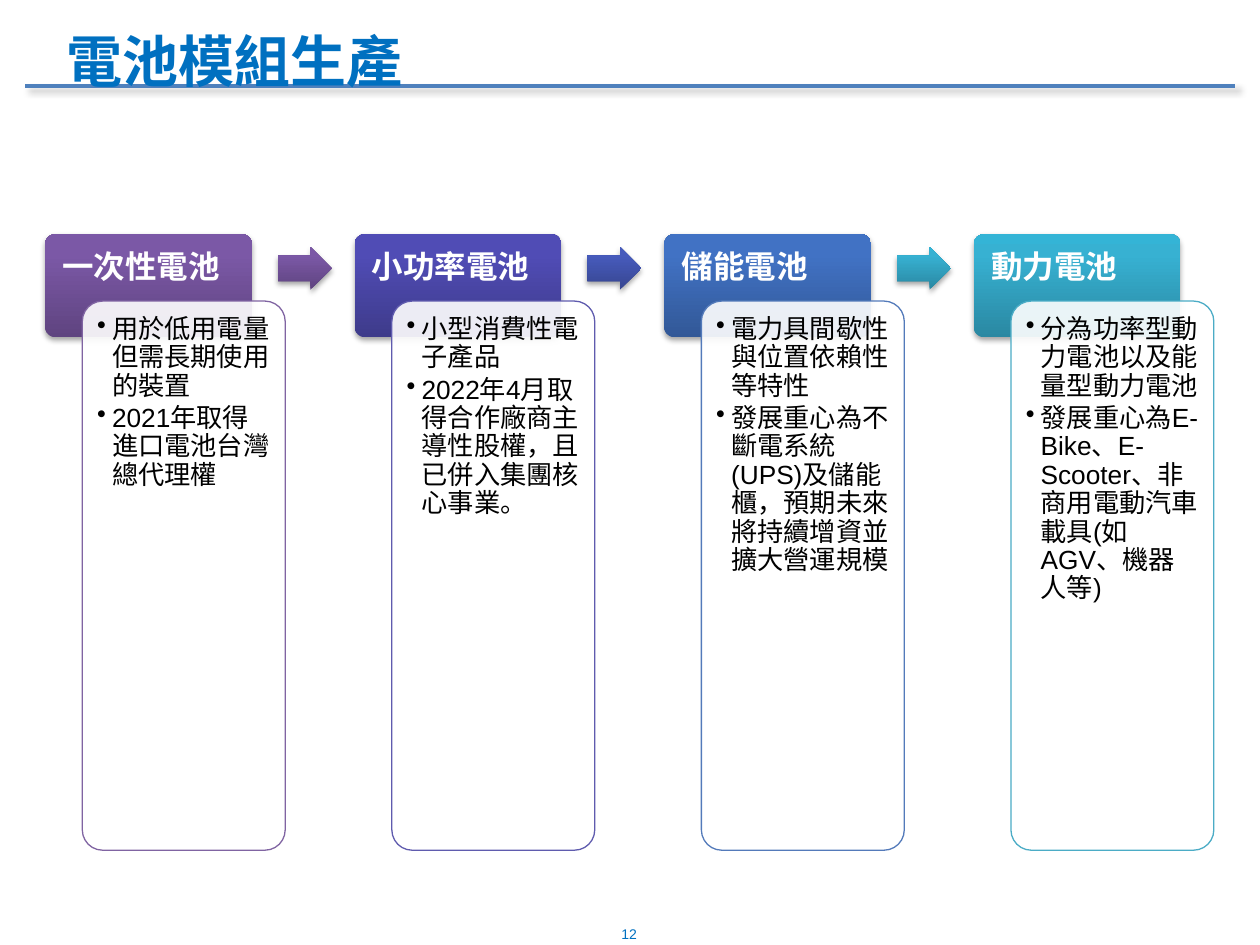
import dataclasses

import lxml.etree
import pptx
import pptx.dml.color
import pptx.enum.shapes
import pptx.enum.text
import pptx.oxml
import pptx.oxml.ns
import pptx.util

Cm = pptx.util.Cm
Pt = pptx.util.Pt
qn = pptx.oxml.ns.qn
SHAPES = pptx.enum.shapes.MSO_SHAPE
ALIGN = pptx.enum.text.PP_ALIGN


@dataclasses.dataclass(frozen=True)
class Theme:
    font: str = "Arial"
    accent: str = "0070C0"
    rule: str = "4F81BD"
    white: str = "FFFFFF"
    black: str = "000000"
    title_size: float = 32
    header_size: float = 18
    body_size: float = 15
    number_size: float = 8
    purple: tuple = ("5F4480", "7B58A6", "7C57A8")
    indigo: tuple = ("3E3B8B", "504CB5", "4F4BB8")
    royal: tuple = ("374691", "475BBC", "455ABF")
    blue: tuple = ("325897", "4172C4", "3F72C7")
    teal: tuple = ("2A88A2", "37B1D2", "34B4D6")


THEME = Theme()

# Heading, header gradient, outline, gradient of the arrow that follows, bullets
STAGES = [
    ("一次性電池", THEME.purple, "8064A2", THEME.purple,
     ["用於低用電量但需長期使用的裝置", "2021年取得進口電池台灣總代理權"]),
    ("小功率電池", THEME.indigo, "5F5BAE", THEME.royal,
     ["小型消費性電子產品",
      "2022年4月取得合作廠商主導性股權，且已併入集團核心事業。"]),
    ("儲能電池", THEME.blue, "537ABA", THEME.teal,
     ["電力具間歇性與位置依賴性等特性",
      "發展重心為不斷電系統(UPS)及儲能櫃，預期未來將持續增資並擴大營運規模"]),
    ("動力電池", THEME.teal, "4BACC6", None,
     ["分為功率型動力電池以及能量型動力電池",
      "發展重心為E-Bike、E-Scooter、非商用電動汽車載具(如AGV、機器人等)"]),
]
STAGE_LEFT, STAGE_TOP, STAGE_PITCH = 0.91, 4.72, 6.24


def rgb(value):
    return pptx.dml.color.RGBColor.from_string(value)


def add_child(parent, tag, **attributes):
    child = lxml.etree.SubElement(parent, qn(tag))
    for name, value in attributes.items():
        child.set(name, str(value))
    return child


def add_shadow(properties, blur, distance, angle, opacity):
    """Give shape properties an outer shadow; call after fill and line are set."""
    effects = properties.find(qn("a:effectLst"))
    if effects is None:
        effects = add_child(properties, "a:effectLst")
    shadow = add_child(effects, "a:outerShdw", blurRad=Pt(blur), dist=Pt(distance),
                       dir=angle * 60000, algn="ctr", rotWithShape=0)
    color = add_child(shadow, "a:srgbClr", val=THEME.black)
    add_child(color, "a:alpha", val=opacity * 1000)


def fill_gradient(shape, colors):
    """Fill from bottom to top with three colours."""
    shape.fill.solid()
    solid = shape._element.spPr.find(qn("a:solidFill"))
    gradient = pptx.oxml.parse_xml(
        f'<a:gradFill {pptx.oxml.ns.nsdecls("a")} rotWithShape="1"/>')
    stops = add_child(gradient, "a:gsLst")
    for position, color in zip((0, 80, 100), colors):
        stop = add_child(stops, "a:gs", pos=position * 1000)
        add_child(stop, "a:srgbClr", val=color)
    add_child(gradient, "a:lin", ang=270 * 60000, scaled=0)
    solid.getparent().replace(solid, gradient)


def write_text(shape, text, *, size, color, bold=False, align=ALIGN.LEFT,
               bullet=False, line_spacing=None, space_after=0, margin=None):
    """Write one paragraph for each line of text."""
    frame = shape.text_frame
    frame.word_wrap = True
    frame.vertical_anchor = pptx.enum.text.MSO_ANCHOR.TOP
    if margin is not None:
        frame.margin_left, frame.margin_right = Cm(margin[0]), Cm(margin[0])
        frame.margin_top, frame.margin_bottom = Cm(margin[1]), Cm(margin[1])
    frame.text = text
    for paragraph in frame.paragraphs:
        paragraph.alignment = align
        paragraph.line_spacing = line_spacing
        paragraph.space_after = Pt(space_after)
        if bullet:
            properties = paragraph._p.get_or_add_pPr()
            properties.set("marL", str(Cm(0.3)))
            properties.set("indent", str(-Cm(0.3)))
            add_child(properties, "a:buChar", char="•")
        font = paragraph.font
        font.name, font.size, font.bold = THEME.font, Pt(size), bold
        font.color.rgb = rgb(color)


def add_label(slide, text, left, top, width, height, **text_format):
    box = slide.shapes.add_textbox(Cm(left), Cm(top), Cm(width), Cm(height))
    write_text(box, text, **text_format)


def add_title_rule(slide):
    rule = slide.shapes.add_connector(pptx.enum.shapes.MSO_CONNECTOR.STRAIGHT,
                                      Cm(24.89), Cm(1.73), Cm(0.51), Cm(1.73))
    rule.line.color.rgb = rgb(THEME.rule)
    rule.line.width = Pt(2)
    add_shadow(rule._element.spPr, 4, 3, 45, 40)


def add_preset(slide, preset, left, top, width, height, adjustments):
    shape = slide.shapes.add_shape(preset, Cm(left), Cm(top), Cm(width), Cm(height))
    for index, value in enumerate(adjustments):
        shape.adjustments[index] = value
    shape.shadow.inherit = False
    return shape


def add_gradient_shape(slide, preset, *position, adjustments, colors):
    shape = add_preset(slide, preset, *position, adjustments)
    fill_gradient(shape, colors)
    shape.line.fill.background()
    add_shadow(shape._element.spPr, 3.1, 1.8, 90, 35)
    return shape


def add_body_card(slide, left, top, outline, bullets):
    card = add_preset(slide, SHAPES.ROUNDED_RECTANGLE, left, top, 4.09, 11.07, [0.1])
    card.fill.solid()
    card.fill.fore_color.rgb = rgb(THEME.white)
    color = card._element.spPr.find(qn("a:solidFill"))[0]
    add_child(color, "a:alpha", val=90000)
    card.line.color.rgb = rgb(outline)
    card.line.width = Pt(0.75)
    write_text(card, "\n".join(bullets), size=THEME.body_size, color=THEME.black,
               bullet=True, line_spacing=0.9, space_after=2.25, margin=(0.18, 0.18))


def add_stage(slide, left, heading, header_colors, outline, arrow_colors, bullets):
    header = add_gradient_shape(slide, SHAPES.ROUNDED_RECTANGLE, left, STAGE_TOP,
                                4.17, 2.08, adjustments=[0.1], colors=header_colors)
    write_text(header, heading, size=THEME.header_size, color=THEME.white, bold=True,
               line_spacing=0.9, margin=(0.29, 0.29))
    add_body_card(slide, left + 0.75, STAGE_TOP + 1.35, outline, bullets)
    if arrow_colors:
        add_gradient_shape(slide, SHAPES.RIGHT_ARROW, left + 4.69, STAGE_TOP + 0.26,
                           1.09, 0.86, adjustments=[0.6, 0.5], colors=arrow_colors)


def main():
    presentation = pptx.Presentation()
    presentation.slide_width, presentation.slide_height = Cm(25.4), Cm(19.05)
    slide = presentation.slides.add_slide(presentation.slide_layouts[6])
    add_title_rule(slide)
    add_label(slide, "電池模組生產", 1.09, 0.41, 16.84, 1.24,
              size=THEME.title_size, color=THEME.accent, bold=True)
    add_label(slide, "12", 12.14, 18.54, 1.09, 0.51,
              size=THEME.number_size, color=THEME.accent, align=ALIGN.CENTER)
    for index, stage in enumerate(STAGES):
        add_stage(slide, STAGE_LEFT + index * STAGE_PITCH, *stage)
    presentation.save("out.pptx")


if __name__ == "__main__":
    main()
